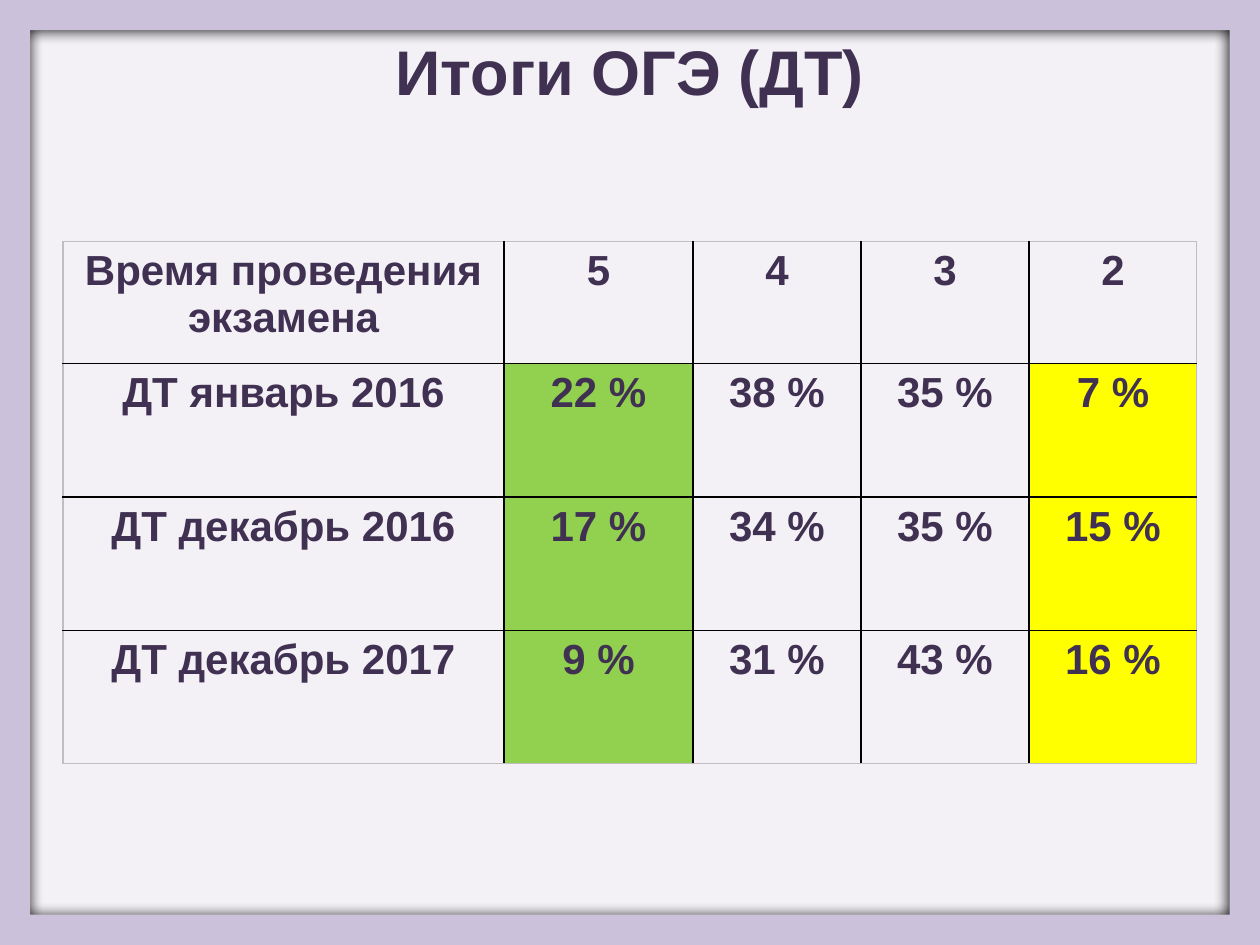
from lxml.etree import SubElement
from pptx import Presentation
from pptx.dml.color import RGBColor
from pptx.enum.shapes import MSO_SHAPE
from pptx.enum.text import MSO_ANCHOR, PP_ALIGN
from pptx.oxml import parse_xml
from pptx.oxml.ns import nsdecls, qn
from pptx.util import Pt

TITLE = "Итоги ОГЭ (ДТ)"
RESULTS = [
    ("Время проведения экзамена", "5", "4", "3", "2"),
    ("ДТ январь 2016", "22 %", "38 %", "35 %", "7 %"),
    ("ДТ декабрь 2016", "17 %", "34 %", "35 %", "15 %"),
    ("ДТ декабрь 2017", "9 %", "31 %", "43 %", "16 %"),
]
COLORS = {
    "background": "F4F1F6", "frame": "CCC1DA", "text": "403152",
    "best": "92D050", "worst": "FFFF00", "grid": "000000", "edge": "BFBFBF",
}
COLUMN_FILLS = {1: "best", 4: "worst"}
COLUMN_WIDTHS = [252, 108, 96, 96, 96]
ROW_HEIGHTS = [69.84, 76.2, 76.2, 76.2]
TABLE_LEFT, TABLE_TOP = 36, 138


def paint(fill, name):
    fill.solid()
    fill.fore_color.rgb = RGBColor.from_string(COLORS[name])


def style_text(paragraph, size):
    paragraph.alignment = PP_ALIGN.CENTER
    font = paragraph.font
    font.name, font.size, font.bold = "Arial", Pt(size), True
    font.color.rgb = RGBColor.from_string(COLORS["text"])


def add_borders(cell, outer_sides):
    properties = cell._tc.get_or_add_tcPr()
    for position, (side, is_outer) in enumerate(outer_sides.items()):
        name, width = ("edge", 0.75) if is_outer else ("grid", 1)
        border = parse_xml(
            f'<a:{side} {nsdecls("a")} w="{Pt(width)}"><a:solidFill>'
            f'<a:srgbClr val="{COLORS[name]}"/></a:solidFill></a:{side}>')
        properties.insert(position, border)


def add_frame(slide, width, height):
    frame = slide.shapes.add_shape(MSO_SHAPE.FRAME, 0, 0, width, height)
    frame.adjustments[0] = 0.032
    paint(frame.fill, "frame")
    frame.line.fill.background()
    frame.shadow.inherit = False
    effects = frame._element.spPr.find(qn("a:effectLst"))
    shadow = SubElement(effects, qn("a:outerShdw"), blurRad=str(Pt(8.5)),
                        dist=str(Pt(1)), dir="5400000", algn="ctr", rotWithShape="0")
    SubElement(shadow, qn("a:srgbClr"), val=COLORS["grid"])
    slide.shapes._spTree.insert(2, frame._element)


def add_title(slide):
    title = slide.shapes.title
    title.left, title.top, title.width, title.height = Pt(20), Pt(15), Pt(680), Pt(51)
    title.text_frame.text = TITLE
    title.text_frame.vertical_anchor = MSO_ANCHOR.TOP
    style_text(title.text_frame.paragraphs[0], 36)


def add_results(slide):
    last_row, last_column = len(RESULTS) - 1, len(COLUMN_WIDTHS) - 1
    table = slide.shapes.add_table(
        len(RESULTS), len(COLUMN_WIDTHS), Pt(TABLE_LEFT), Pt(TABLE_TOP),
        Pt(sum(COLUMN_WIDTHS)), Pt(sum(ROW_HEIGHTS))).table
    table.first_row = table.horz_banding = False
    for column, width in zip(table.columns, COLUMN_WIDTHS):
        column.width = Pt(width)
    for r, (row, height) in enumerate(zip(RESULTS, ROW_HEIGHTS)):
        table.rows[r].height = Pt(height)
        for c, value in enumerate(row):
            cell = table.cell(r, c)
            cell.text = value
            style_text(cell.text_frame.paragraphs[0], 24)
            if r and c in COLUMN_FILLS:
                paint(cell.fill, COLUMN_FILLS[c])
            else:
                cell.fill.background()
            add_borders(cell, {"lnL": c == 0, "lnR": c == last_column,
                               "lnT": r == 0, "lnB": r == last_row})


def main():
    """Build the exam results slide."""
    deck = Presentation()
    deck.slide_width, deck.slide_height = Pt(720), Pt(540)
    slide = deck.slides.add_slide(deck.slide_layouts[5])
    paint(slide.background.fill, "background")
    add_frame(slide, deck.slide_width, deck.slide_height)
    add_title(slide)
    add_results(slide)
    deck.save("out.pptx")


if __name__ == "__main__":
    main()
